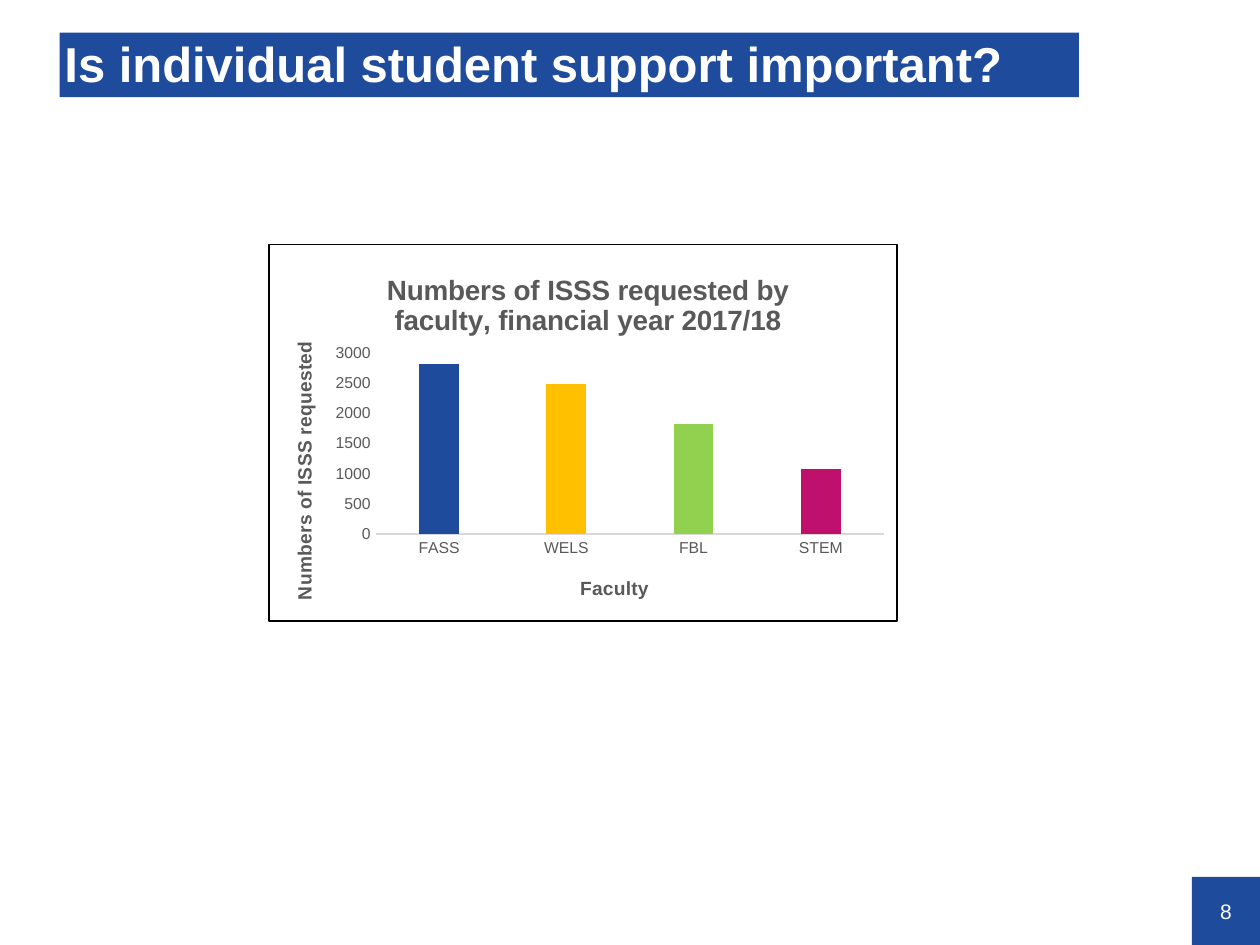
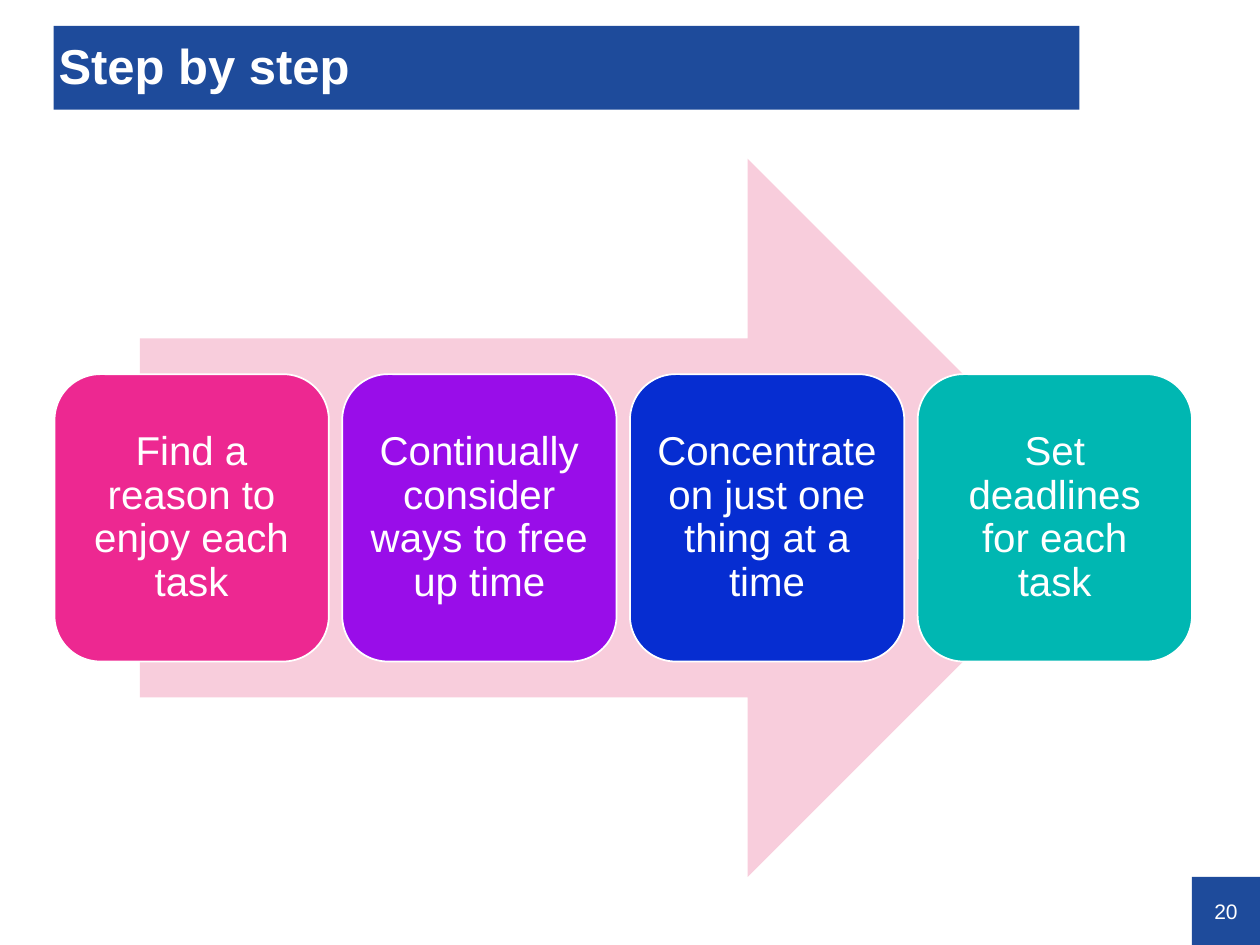
from lxml import etree
from pptx import Presentation
from pptx.chart.data import CategoryChartData
from pptx.dml.color import RGBColor
from pptx.enum.chart import XL_CHART_TYPE, XL_TICK_MARK
from pptx.enum.shapes import MSO_SHAPE
from pptx.enum.text import MSO_ANCHOR, MSO_AUTO_SIZE, PP_ALIGN
from pptx.oxml import parse_xml
from pptx.oxml.ns import nsdecls, qn
from pptx.util import Cm, Pt

COLUMNS = XL_CHART_TYPE.COLUMN_CLUSTERED
NO_TICKS = XL_TICK_MARK.NONE
RECT = MSO_SHAPE.RECTANGLE
ROUNDED = MSO_SHAPE.ROUNDED_RECTANGLE
ARROW = MSO_SHAPE.RIGHT_ARROW
MIDDLE = MSO_ANCHOR.MIDDLE
NO_AUTOFIT = MSO_AUTO_SIZE.NONE
LEFT, CENTER = PP_ALIGN.LEFT, PP_ALIGN.CENTER

WHITE = RGBColor(0xFF, 0xFF, 0xFF)
BLUE = RGBColor(0x1E, 0x4B, 0x9B)
GREY = RGBColor(0x59, 0x59, 0x59)
PALE_GREY = RGBColor(0xD9, 0xD9, 0xD9)
YELLOW = RGBColor(0xFF, 0xC0, 0x00)
GREEN = RGBColor(0x92, 0xD0, 0x50)
MAGENTA = RGBColor(0xC0, 0x10, 0x6E)
PALE_PINK = RGBColor(0xF8, 0xCD, 0xDC)
PINK = RGBColor(0xED, 0x28, 0x91)
PURPLE = RGBColor(0x99, 0x0D, 0xE9)
ROYAL_BLUE = RGBColor(0x06, 0x2D, 0xD1)
TEAL = RGBColor(0x00, 0xB7, 0xB2)
FONT = "Arial"

SLIDE_W, SLIDE_H = 25.4, 19.05
NUMBER_SIZE = 1.37

FACULTIES = [("FASS", 2820, BLUE), ("WELS", 2500, YELLOW),
             ("FBL", 1820, GREEN), ("STEM", 1080, MAGENTA)]
STEPS = [("Find a reason to enjoy each task", PINK),
         ("Continually consider ways to free up time", PURPLE),
         ("Concentrate on just one thing at a time", ROYAL_BLUE),
         ("Set deadlines for each task", TEAL)]


def style_font(font, size, color, bold=False):
    font.name, font.size, font.bold = FONT, Pt(size), bold
    font.color.rgb = color


def write(shape, text, size, align, insets, bold=False, spacing=None):
    frame = shape.text_frame
    frame.text = text
    frame.word_wrap = True
    frame.auto_size = NO_AUTOFIT
    frame.vertical_anchor = MIDDLE
    (frame.margin_left, frame.margin_top,
     frame.margin_right, frame.margin_bottom) = [Cm(inset) for inset in insets]
    paragraph = frame.paragraphs[0]
    paragraph.alignment = align
    paragraph.line_spacing = spacing
    style_font(paragraph.runs[0].font, size, WHITE, bold)


def add_filled(slide, preset, box, color):
    shape = slide.shapes.add_shape(preset, *[Cm(length) for length in box])
    shape.shadow.inherit = False
    shape.fill.solid()
    shape.fill.fore_color.rgb = color
    shape.line.fill.background()
    return shape


def start_slide(prs, title, band, number):
    slide = prs.slides.add_slide(prs.slide_layouts[5])
    # Page number in the bottom right corner
    corner = (SLIDE_W - NUMBER_SIZE, SLIDE_H - NUMBER_SIZE,
              NUMBER_SIZE, NUMBER_SIZE)
    write(add_filled(slide, RECT, corner, BLUE), number, 12, CENTER, [0] * 4)
    # Title band
    heading = slide.shapes.title
    heading.left, heading.top, heading.width, heading.height = map(Cm, band)
    heading.fill.solid()
    heading.fill.fore_color.rgb = BLUE
    write(heading, title, 28, LEFT, (0.1, 0.05, 0, 0), bold=True, spacing=0.9)
    return slide


def set_layout(parent, **fractions):
    """Place a chart part by fractions of the chart area."""
    layout = parent.find(qn("c:layout"))
    if layout is None:
        layout = etree.Element(qn("c:layout"))
        parent.insert(0, layout)
    manual = etree.SubElement(layout, qn("c:manualLayout"))
    for tag, value in fractions.items():
        etree.SubElement(manual, qn(f"c:{tag}")).set("val", str(value))


def set_chart_title(title, text, size, x, y):
    frame = title.text_frame
    frame.text = text
    style_font(frame.paragraphs[0].runs[0].font, size, GREY, bold=True)
    set_layout(title._element, xMode="edge", yMode="edge", x=x, y=y)
    return frame


def add_requests_chart(slide, box):
    data = CategoryChartData()
    data.categories = [name for name, _, _ in FACULTIES]
    data.add_series("Series 1", [count for _, count, _ in FACULTIES])
    chart = slide.shapes.add_chart(COLUMNS, *map(Cm, box), data).chart
    chart.has_legend = False
    style_font(chart.font, 10, GREY)

    # White chart area with a black frame
    chart._chartSpace.find(qn("c:chart")).addnext(parse_xml(
        f'<c:spPr {nsdecls("c", "a")}>'
        '<a:solidFill><a:srgbClr val="FFFFFF"/></a:solidFill>'
        '<a:ln w="12700"><a:solidFill><a:srgbClr val="000000"/></a:solidFill>'
        '</a:ln></c:spPr>'))

    # Columns
    plot = chart.plots[0]
    plot.gap_width, plot.overlap = 219, -27
    plot.vary_by_categories = False
    requests = plot.series[0]
    requests.format.fill.solid()
    requests.format.fill.fore_color.rgb = BLUE
    for index, (_, _, color) in enumerate(FACULTIES):
        fill = requests.points[index].format.fill
        fill.solid()
        fill.fore_color.rgb = color

    # Axes
    faculty_axis, count_axis = chart.category_axis, chart.value_axis
    for axis in (faculty_axis, count_axis):
        axis.major_tick_mark = axis.minor_tick_mark = NO_TICKS
        style_font(axis.tick_labels.font, 9, GREY)
    faculty_axis.format.line.color.rgb = PALE_GREY
    faculty_axis.format.line.width = Pt(0.75)
    count_axis.format.line.fill.background()
    count_axis.has_major_gridlines = False
    count_axis.minimum_scale, count_axis.maximum_scale = 0, 3000
    count_axis.major_unit = 500

    # Titles and plot position
    chart.has_title = True
    set_chart_title(chart.chart_title, "Numbers of ISSS requested by faculty, "
                    "financial year 2017/18", 16, 0.18, 0.06)
    set_chart_title(faculty_axis.axis_title, "Faculty", 11, 0.49, 0.87)
    upright = set_chart_title(count_axis.axis_title,
                              "Numbers of ISSS requested", 11, 0.03, 0.25)
    upright._txBody.bodyPr.set("rot", "-5400000")
    upright._txBody.bodyPr.set("vert", "horz")
    set_layout(chart._chartSpace.chart.plotArea, layoutTarget="inner",
               xMode="edge", yMode="edge", x=0.17, y=0.29, w=0.81, h=0.48)


def add_step_process(slide, box):
    left, top, width, height = box
    # Arrow behind the cards
    arrow_w = 0.85 * width
    add_filled(slide, ARROW, (left + (width - arrow_w) / 2, top,
                              arrow_w, height), PALE_PINK)
    # One card per step
    gap = 0.27
    card_w = (width - gap * (len(STEPS) - 1)) / len(STEPS)
    card_h = 0.4 * height
    for index, (step, color) in enumerate(STEPS):
        card = add_filled(slide, ROUNDED,
                          (left + index * (card_w + gap),
                           top + (height - card_h) / 2, card_w, card_h), color)
        card.line.color.rgb = WHITE
        card.line.width = Pt(1)
        write(card, step, 23, CENTER, [0.25] * 4, spacing=0.9)


def main():
    prs = Presentation()
    prs.slide_width, prs.slide_height = Cm(SLIDE_W), Cm(SLIDE_H)

    support = start_slide(prs, "Is individual student support important?",
                          (1.2, 0.66, 20.55, 1.3), "8")
    add_requests_chart(support, (5.4, 4.91, 12.7, 7.62))

    steps = start_slide(prs, "Step by step", (1.08, 0.52, 20.68, 1.69), "20")
    add_step_process(steps, (1.1, 3.2, 22.93, 14.48))

    prs.save("out.pptx")


if __name__ == "__main__":
    main()
